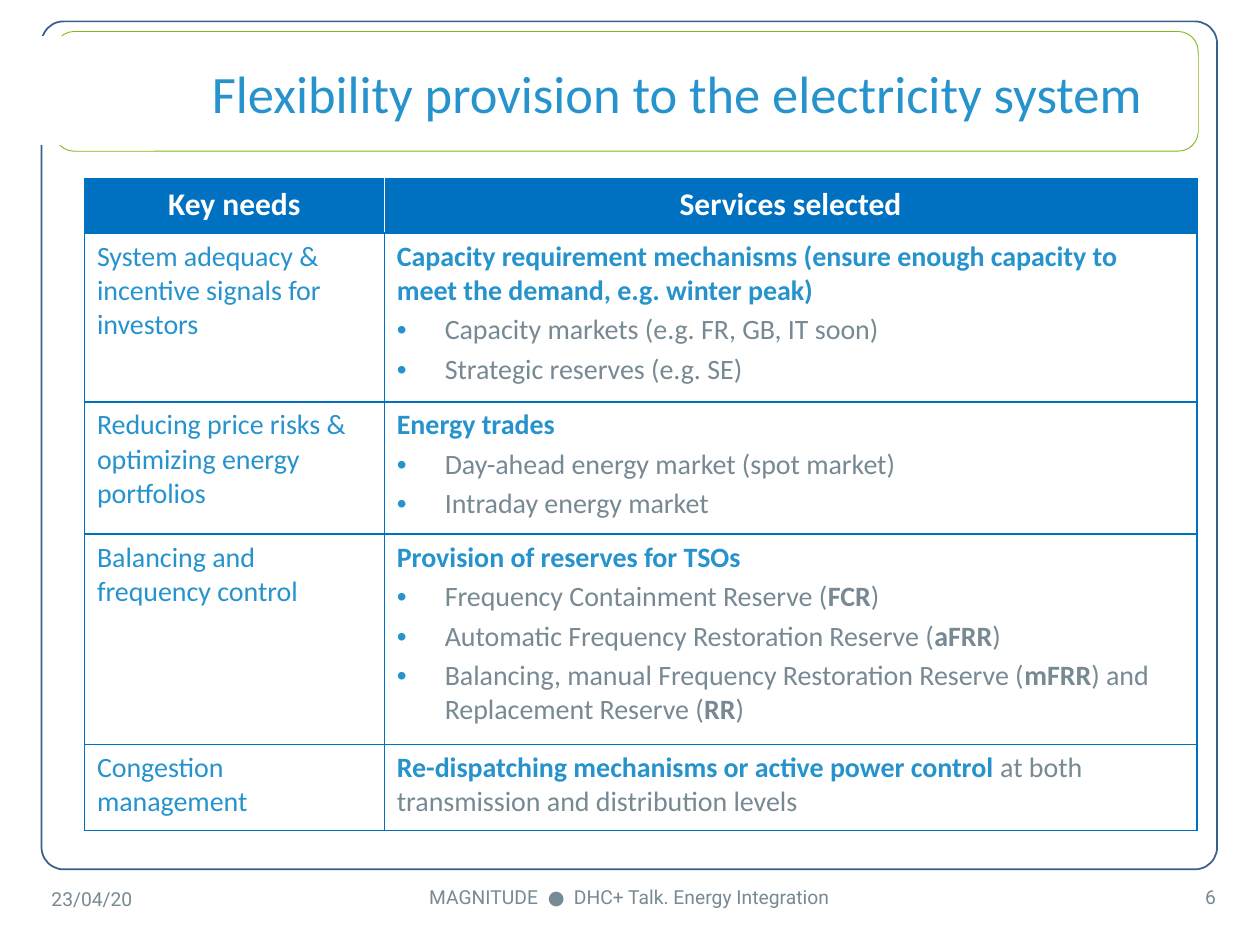
"""Build the slide on flexibility provision to the electricity system."""
from lxml import etree
from pptx import Presentation
from pptx.dml.color import RGBColor
from pptx.enum import shapes, text
from pptx.oxml.ns import qn
from pptx.util import Inches, Pt

COLORS = {"blue": "2693CD", "grey": "778993", "header": "0070C0", "white": "FFFFFF",
          "green": "84B819", "frame": "3A5F8C"}
LEFT, CENTER, RIGHT = text.PP_ALIGN.LEFT, text.PP_ALIGN.CENTER, text.PP_ALIGN.RIGHT
ROUNDED, RECTANGLE = shapes.MSO_SHAPE.ROUNDED_RECTANGLE, shapes.MSO_SHAPE.RECTANGLE

TITLE = "Flexibility provision to the electricity system"
FOOTERS = [
    ("23/04/20", LEFT, (0.31, 6.93, 1.25, 0.4)),
    ("MAGNITUDE  ●  DHC+ Talk. Energy Integration", CENTER, (2.85, 6.92, 4.29, 0.4)),
    ("6", RIGHT, (8.42, 6.92, 1.33, 0.4)),
]
HEADERS = ["Key needs", "Services selected"]
NEEDS = [
    ("System adequacy & incentive signals for investors",
     "*Capacity requirement mechanisms (ensure enough capacity to meet the demand, e.g. winter peak)*",
     ["Capacity markets (e.g. FR, GB, IT soon)", "Strategic reserves (e.g. SE)"]),
    ("Reducing price risks & optimizing energy portfolios",
     "*Energy trades*",
     ["Day-ahead energy market (spot market)", "Intraday energy market"]),
    ("Balancing and frequency control",
     "*Provision of reserves for TSOs*",
     ["Frequency Containment Reserve (*FCR*)",
      "Automatic Frequency Restoration Reserve (*aFRR*)",
      "Balancing, manual Frequency Restoration Reserve (*mFRR*) and Replacement Reserve (*RR*)"]),
    ("Congestion management",
     "*Re-dispatching mechanisms or active power control *at both transmission and distribution levels",
     []),
]
COLUMN_WIDTHS = [2.38, 6.45]
ROW_HEIGHTS = [0.43, 1.34, 1.05, 1.67, 0.68]


def rgb(name):
    return RGBColor.from_string(COLORS[name])


def write(paragraph, content, size=16, color="blue", bold_color=None, font="Calibri",
          align=LEFT, bullet=False, space=0):
    """Fill a paragraph, setting the parts between asterisks in bold."""
    if bullet:
        properties = paragraph._p.get_or_add_pPr()
        properties.set("marL", str(Inches(0.38)))
        properties.set("indent", str(Inches(-0.38)))
        bullet_color = etree.SubElement(properties, qn("a:buClr"))
        etree.SubElement(bullet_color, qn("a:srgbClr"), val=COLORS["blue"])
        etree.SubElement(properties, qn("a:buFont"), typeface="Arial")
        etree.SubElement(properties, qn("a:buChar"), char="•")
    paragraph.alignment = align
    paragraph.space_before = Pt(space)
    for index, part in enumerate(content.split("*")):
        if part:
            bold = index % 2 == 1
            run = paragraph.add_run()
            run.text = part
            run.font.size = Pt(size)
            run.font.name = font
            run.font.bold = bold
            run.font.color.rgb = rgb(bold_color or color if bold else color)


def add_box(slide, kind, bounds, line, width, fill="white"):
    shape = slide.shapes.add_shape(kind, *map(Inches, bounds))
    shape.shadow.inherit = False
    if fill:
        shape.fill.solid()
        shape.fill.fore_color.rgb = rgb(fill)
    else:
        shape.fill.background()
    shape.line.color.rgb = rgb(line)
    shape.line.width = Pt(width)
    return shape


def style_cell(cell, fill, **edges):
    properties = cell._tc.get_or_add_tcPr()
    for side in "LRTB":
        line = etree.SubElement(properties, qn("a:ln" + side), w=str(Pt(1)))
        solid = etree.SubElement(line, qn("a:solidFill"))
        etree.SubElement(solid, qn("a:srgbClr"), val=COLORS[edges.get(side, "header")])
    cell.fill.solid()
    cell.fill.fore_color.rgb = rgb(fill)


def add_needs_table(slide):
    frame = slide.shapes.add_table(len(ROW_HEIGHTS), len(COLUMN_WIDTHS), Inches(0.67), Inches(1.42),
                                   Inches(sum(COLUMN_WIDTHS)), Inches(sum(ROW_HEIGHTS)))
    table = frame.table
    for column, width in zip(table.columns, COLUMN_WIDTHS):
        column.width = Inches(width)
    for row, height in zip(table.rows, ROW_HEIGHTS):
        row.height = Inches(height)
    for index, (header, inner_side) in enumerate(zip(HEADERS, "RL")):
        cell = table.cell(0, index)
        style_cell(cell, "header", **{inner_side: "white"})
        write(cell.text_frame.paragraphs[0], f"*{header}*", size=18, color="white", align=CENTER)
    for index, (need, service, details) in enumerate(NEEDS, start=1):
        need_cell, service_cell = table.cell(index, 0), table.cell(index, 1)
        style_cell(need_cell, "white")
        style_cell(service_cell, "white")
        write(need_cell.text_frame.paragraphs[0], need)
        frame = service_cell.text_frame
        write(frame.paragraphs[0], service, color="grey", bold_color="blue")
        for detail in details:
            write(frame.add_paragraph(), detail, color="grey", bullet=True, space=3)


def main():
    presentation = Presentation()
    presentation.slide_width, presentation.slide_height = Inches(10), Inches(7.5)
    slide = presentation.slides.add_slide(presentation.slide_layouts[6])

    add_box(slide, ROUNDED, (0.43, 0.25, 9.08, 0.95), "green", 0.5)
    page_frame = add_box(slide, ROUNDED, (0.33, 0.17, 9.33, 6.73), "frame", 1, fill=None)
    page_frame.adjustments[0] = 0.026
    add_box(slide, RECTANGLE, (0.11, 0.3, 0.47, 0.84), "white", 2)
    title = add_box(slide, ROUNDED, (1.25, 0.3, 8.25, 0.87), "white", 1)
    title.text_frame.word_wrap = True
    title.text_frame.vertical_anchor = text.MSO_ANCHOR.MIDDLE
    write(title.text_frame.paragraphs[0], TITLE, size=30, align=CENTER)

    for content, align, bounds in FOOTERS:
        frame = slide.shapes.add_textbox(*map(Inches, bounds)).text_frame
        frame.word_wrap = True
        frame.vertical_anchor = text.MSO_ANCHOR.MIDDLE
        write(frame.paragraphs[0], content, size=11, color="grey", font="Roboto", align=align)

    add_needs_table(slide)
    presentation.save("out.pptx")


if __name__ == "__main__":
    main()
